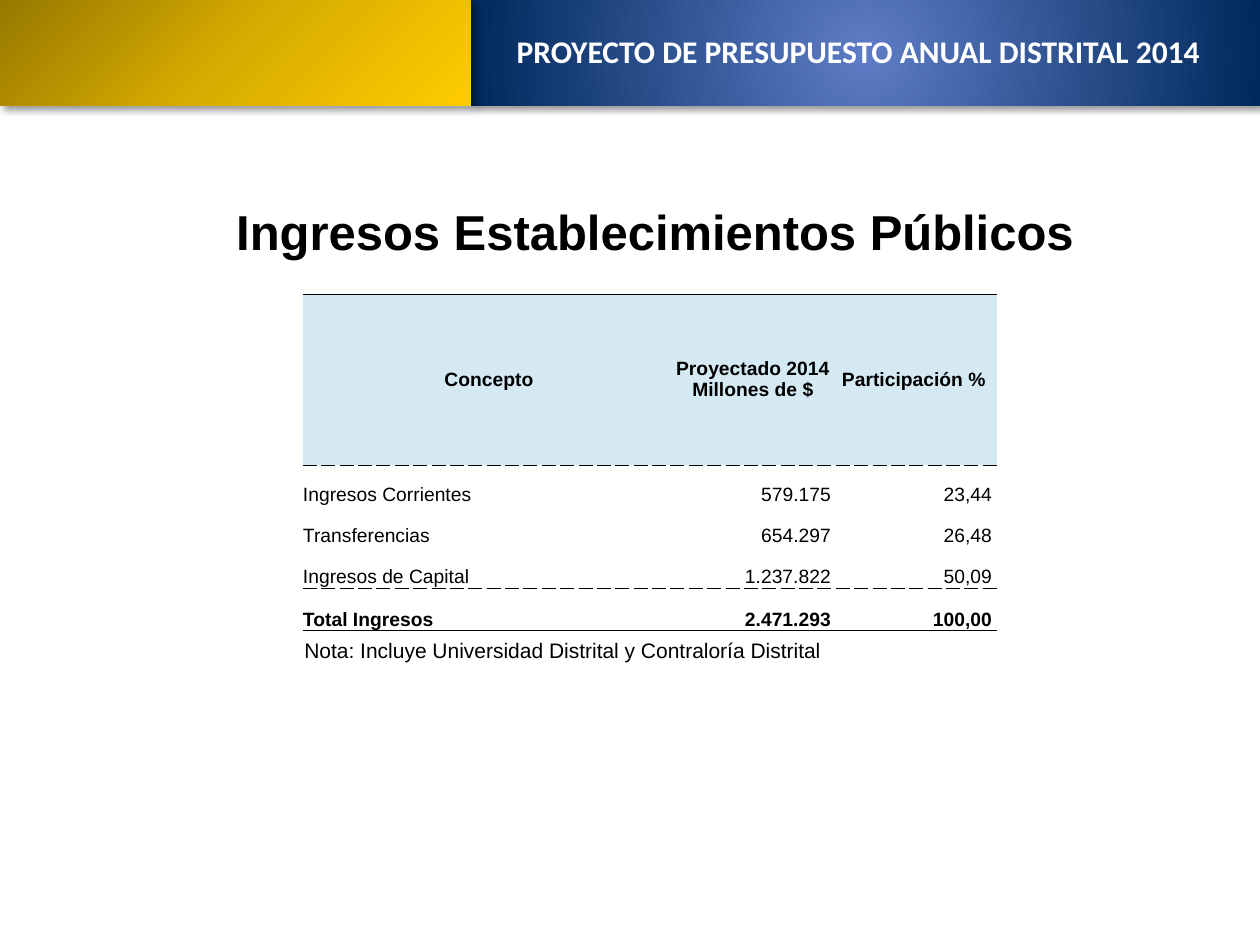
"""Build the slide on the income of public establishments in the 2014 district budget."""
from pptx import Presentation, util as u
from pptx.dml.color import RGBColor
from pptx.enum import shapes, text
from pptx.oxml import parse_xml
from pptx.oxml.ns import nsdecls, qn

PX = 914400 // 126
LEFT, CENTER, RIGHT = text.PP_ALIGN.LEFT, text.PP_ALIGN.CENTER, text.PP_ALIGN.RIGHT


def color(value):
    """Turn a hex string into a colour."""
    return RGBColor.from_string(value)


def write(frame, lines, size, bold=False, align=LEFT, font="Arial", ink="000000"):
    """Write one paragraph per line into a text frame."""
    frame.word_wrap = True
    for index, line in enumerate(lines):
        paragraph = frame.add_paragraph() if index else frame.paragraphs[0]
        paragraph.alignment = align
        run = paragraph.add_run()
        run.text = line
        run.font.size = u.Pt(size)
        run.font.bold = bold
        run.font.name = font
        run.font.color.rgb = color(ink)


presentation = Presentation()
presentation.slide_width = u.Inches(10)
presentation.slide_height = u.Inches(7.5)
slide = presentation.slides.add_slide(presentation.slide_layouts[6])

banners = [
    (471, 789, [(0, "5E7CC5"), (100, "00295C")], (50, 50, 50, 50)),
    (0, 471, [(0, "977900"), (50, "D7AC00"), (100, "FFCC00")], (0, 0, 100, 100)),
]
for left, width, stops, focus in banners:
    shape = slide.shapes.add_shape(
        shapes.MSO_SHAPE.RECTANGLE, left * PX, 0, width * PX, 106 * PX)
    shape.line.fill.background()
    shape.fill.background()
    shape.shadow.inherit = False
    stop_xml = "".join(
        f'<a:gs pos="{position * 1000}"><a:srgbClr val="{value}"/></a:gs>'
        for position, value in stops)
    focus_xml = " ".join(f'{side}="{share * 1000}"' for side, share in zip("ltrb", focus))
    properties = shape.fill._xPr
    properties.replace(properties.find(qn("a:noFill")), parse_xml(
        f'<a:gradFill {nsdecls("a")} rotWithShape="1"><a:gsLst>{stop_xml}</a:gsLst>'
        f'<a:path path="circle"><a:fillToRect {focus_xml}/></a:path></a:gradFill>'))
    properties.find(qn("a:effectLst")).append(parse_xml(
        f'<a:outerShdw {nsdecls("a")} blurRad="{u.Pt(4)}" dist="{u.Pt(3)}" dir="2700000">'
        '<a:srgbClr val="000000"><a:alpha val="40000"/></a:srgbClr></a:outerShdw>'))

labels = [
    ((154, 195, 1002, 72), "Ingresos Establecimientos Públicos", (28, True, CENTER)),
    ((491, 26, 735, 58), "PROYECTO DE PRESUPUESTO ANUAL DISTRITAL 2014",
     (18, True, CENTER, "Calibri", "FFFFFF")),
    ((292, 631, 635, 38), "Nota: Incluye Universidad Distrital y Contraloría Distrital", (12,)),
]
for box, label, style in labels:
    textbox = slide.shapes.add_textbox(*(length * PX for length in box))
    write(textbox.text_frame, [label], *style)

rows = [
    ("Concepto", "Proyectado 2014\nMillones de $", "Participación %"),
    ("Ingresos Corrientes", "579.175", "23,44"),
    ("Transferencias", "654.297", "26,48"),
    ("Ingresos de Capital", "1.237.822", "50,09"),
    ("Total Ingresos", "2.471.293", "100,00"),
]
column_widths = [372, 156, 166]
row_heights = [171, 41, 41, 41, 43]
rules = ["solid", "dash", None, None, "dash", "solid"]
last = len(rows) - 1

table = slide.shapes.add_table(
    len(rows), len(column_widths), 303 * PX, 294 * PX,
    sum(column_widths) * PX, sum(row_heights) * PX).table
table.first_row = False
table.horz_banding = False
for column, width in zip(table.columns, column_widths):
    column.width = width * PX
for row_index, values in enumerate(rows):
    table.rows[row_index].height = row_heights[row_index] * PX
    header = row_index == 0
    for column_index, value in enumerate(values):
        cell = table.cell(row_index, column_index)
        cell.margin_left = cell.margin_top = cell.margin_bottom = 0
        cell.margin_right = 5 * PX if column_index == 2 and not header else 0
        cell.vertical_anchor = text.MSO_ANCHOR.MIDDLE if header else text.MSO_ANCHOR.BOTTOM
        align = CENTER if header else RIGHT if column_index else LEFT
        write(cell.text_frame, value.split("\n"), 11, row_index in (0, last), align)
        borders = {"L": None, "R": None, "T": rules[row_index], "B": rules[row_index + 1]}
        for side, dash in borders.items():
            line = (f'<a:solidFill><a:srgbClr val="000000"/></a:solidFill><a:prstDash val="{dash}"/>'
                    if dash else "<a:noFill/>")
            cell._tc.get_or_add_tcPr().append(parse_xml(
                f'<a:ln{side} {nsdecls("a")} w="{u.Pt(0.5)}">{line}</a:ln{side}>'))
        cell.fill.solid()
        cell.fill.fore_color.rgb = color("D5E9F3" if header else "FFFFFF")

presentation.save("out.pptx")
